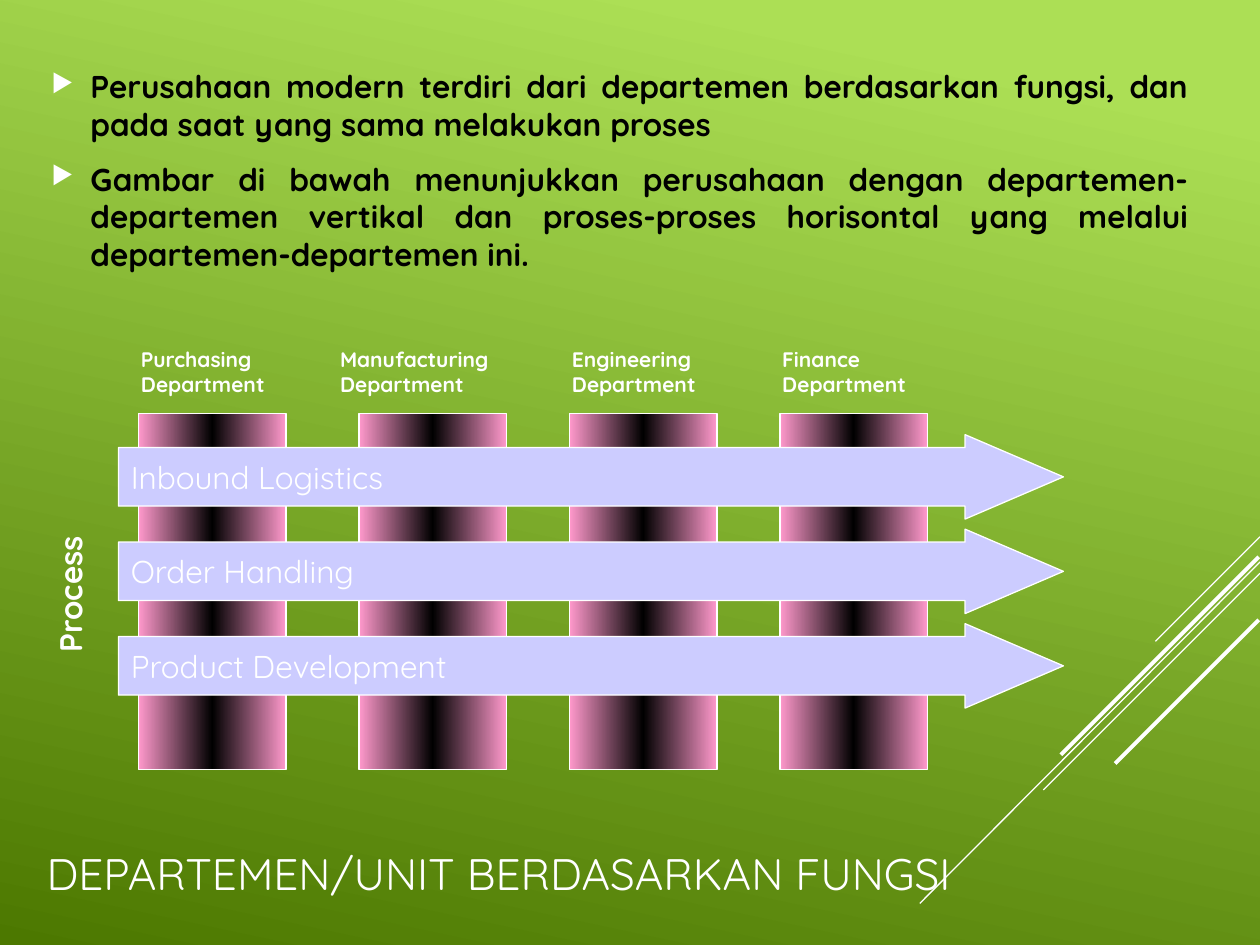
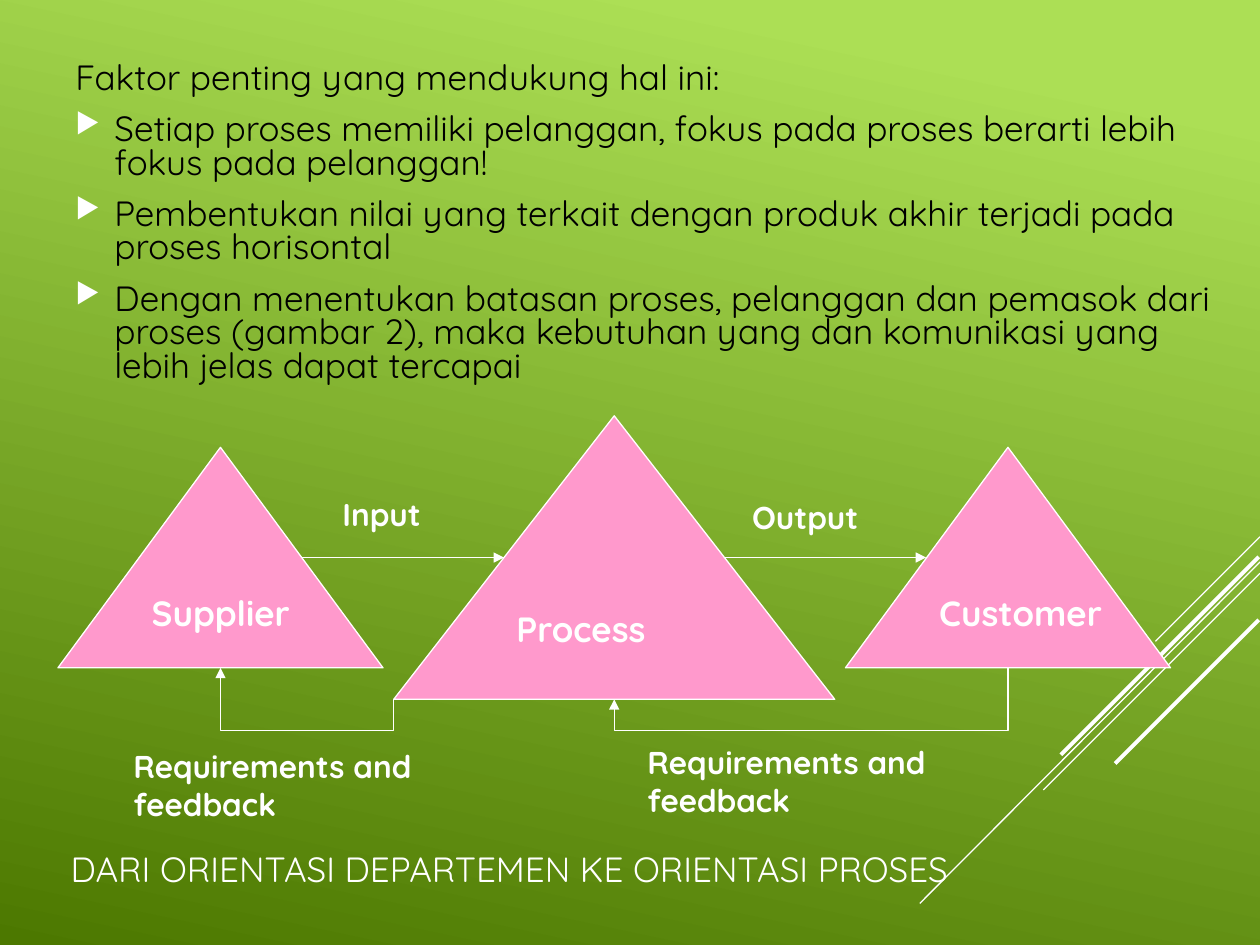
from copy import deepcopy

from pptx import Presentation
from pptx.dml.color import RGBColor
from pptx.enum.shapes import MSO_CONNECTOR, MSO_SHAPE
from pptx.enum.text import MSO_ANCHOR, PP_ALIGN
from pptx.oxml.ns import qn
from pptx.oxml.xmlchemy import OxmlElement
from pptx.util import Inches, Pt

FONT = "Quicksand"
WHITE, BLACK = "FFFFFF", "000000"
PINK, LILAC = "FF99CC", "CCCCFF"
BACKGROUND_STOPS = [(0.1, "ACDF55"), (1, "4C7800")]
BAR_STOPS = [(0, PINK), (0.5, BLACK), (1, PINK)]
# Diagonal strokes in the lower right corner: start, end, width
STROKES = [
    ((10, 4.26), (9.17, 5.09), 0.75),
    ((10, 4.46), (7.3, 7.17), 0.75),
    ((10, 4.55), (8.28, 6.27), 0.75),
    ((9.99, 4.42), (8.42, 5.99), 2.25),
    ((9.99, 4.92), (8.85, 6.06), 2.25),
]


# Shared helpers
def color(value):
    return RGBColor.from_string(value)


def add_element(parent, tag, **attributes):
    element = OxmlElement(tag)
    for name, value in attributes.items():
        element.set(name, str(value))
    parent.append(element)
    return element


def set_gradient(fill, owner, stops, angle):
    fill.gradient()
    fill.gradient_angle = angle
    stop_list = next(owner.iter(qn("a:gsLst")))
    while len(stop_list) < len(stops):
        stop_list.append(deepcopy(stop_list[0]))
    for stop, (position, value) in zip(fill.gradient_stops, stops):
        stop.position = position
        stop.color.rgb = color(value)


def add_bullet(para):
    properties = para._p.get_or_add_pPr()
    bullet_color = add_element(properties, "a:buClr")
    add_element(bullet_color, "a:srgbClr", val=WHITE)
    add_element(properties, "a:buSzPct", val=80000)
    add_element(properties, "a:buChar", char="▶")


def write(frame, text, size=18, ink=WHITE, bold=False, align=PP_ALIGN.LEFT,
          anchor=MSO_ANCHOR.TOP, wrap=True, first=True):
    """Write one paragraph into a text frame and return it."""
    frame.word_wrap = wrap
    frame.vertical_anchor = anchor
    para = frame.paragraphs[0] if first else frame.add_paragraph()
    para.alignment = align
    span = para.add_run()
    span.text = text
    span.font.name = FONT
    span.font.size = Pt(size)
    span.font.bold = bold
    span.font.color.rgb = color(ink)
    return para


def add_label(page, text, box, size=18):
    label = page.shapes.add_textbox(*map(Inches, box))
    write(label.text_frame, text, size=size, bold=True)
    return label


def add_figure(page, kind, box, fill=None):
    figure = page.shapes.add_shape(kind, *map(Inches, box))
    figure.shadow.inherit = False
    if fill:
        figure.fill.solid()
        figure.fill.fore_color.rgb = color(fill)
    figure.line.color.rgb = color(WHITE)
    figure.line.width = Pt(0.75)
    return figure


def add_line(page, start, end, width=0.75, arrow=False,
             kind=MSO_CONNECTOR.STRAIGHT):
    line = page.shapes.add_connector(kind, *map(Inches, (*start, *end)))
    line.line.color.rgb = color(WHITE)
    line.line.width = Pt(width)
    if arrow:
        add_element(line.line._get_or_add_ln(), "a:tailEnd", type="triangle")
    add_element(line._element.spPr, "a:effectLst")
    return line


def add_feedback_arrow(page, start, end, turn_y):
    """Elbow that leaves downwards, crosses at turn_y and comes back up."""
    (start_x, start_y), (end_x, end_y) = start, end
    down = end_y > start_y
    middle_x, middle_y = (start_x + end_x) / 2, (start_y + end_y) / 2
    half_width = abs(end_y - start_y) / 2
    half_height = (start_x - end_x) / 2 * (1 if down else -1)
    elbow = add_line(page, (middle_x - half_width, middle_y - half_height),
                     (middle_x + half_width, middle_y + half_height),
                     arrow=True, kind=MSO_CONNECTOR.ELBOW)
    properties = elbow._element.spPr
    properties.find(qn("a:xfrm")).set("rot", str((90 if down else 270) * 60000))
    bend = round((turn_y - start_y) / (end_y - start_y) * 100000)
    guides = properties.find(qn("a:prstGeom")).get_or_add_avLst()
    add_element(guides, "a:gd", name="adj1", fmla=f"val {bend}")


# Parts that every slide has
def add_page(deck, title, title_box, title_size):
    page = deck.slides.add_slide(deck.slide_layouts[5])
    set_gradient(page.background.fill, page._element, BACKGROUND_STOPS, 258)
    for start, end, width in STROKES:
        add_line(page, start, end, width)
    heading = page.shapes.title
    heading.left, heading.top, heading.width, heading.height = map(Inches, title_box)
    write(heading.text_frame, title, size=title_size, anchor=MSO_ANCHOR.MIDDLE)
    return page


def add_body(page, box, texts, size, intro=None, spacing=None, **style):
    frame = page.shapes.add_textbox(*map(Inches, box)).text_frame
    lines = ([intro] if intro else []) + texts
    for index, text in enumerate(lines):
        para = write(frame, text, size=size, ink=BLACK, first=index == 0,
                     anchor=MSO_ANCHOR.MIDDLE, **style)
        para.line_spacing = spacing
        para.space_before = Pt(size * 0.2)
        para.space_after = Pt(6)
        properties = para._p.get_or_add_pPr()
        properties.set("marL", str(Inches(0.31)))
        properties.set("indent", str(-Inches(0.31)))
        if text != intro:
            add_bullet(para)


# Departments as columns, processes as arrows across them
def add_department_chart(page, box):
    left, top, width, height = box
    departments = [  # name, bar offset, label offset, label width
        ("Purchasing", 1.21, 1.13, 1.33),
        ("Manufacturing", 2.96, 2.71, 1.58),
        ("Engineering", 4.63, 4.55, 1.41),
        ("Finance", 6.3, 6.22, 1.41),
    ]
    bar_top = 0.58
    for name, bar_x, label_x, label_width in departments:
        bar = add_figure(page, MSO_SHAPE.RECTANGLE,
                         (left + bar_x, top + bar_top, 1.17, height - bar_top))
        set_gradient(bar.fill, bar._element, BAR_STOPS, 180)
        add_label(page, f"{name} Department",
                  (left + label_x, top, label_width, 0.5), size=12)

    side_label = add_label(page, "Process", (left, top + 1.71, 1.33, 0.4))
    side_label.rotation = 270

    arrow_x = 1.05
    for row, process in enumerate(
            ["Inbound Logistics", "Order Handling", "Product Development"]):
        arrow = add_figure(page, MSO_SHAPE.RIGHT_ARROW,
                           (left + arrow_x, top + 0.75 * (row + 1),
                            width - arrow_x, 0.67), LILAC)
        arrow.adjustments[0], arrow.adjustments[1] = 0.693, 1.164
        write(arrow.text_frame, process, anchor=MSO_ANCHOR.MIDDLE, wrap=False)


# Supplier, process and customer with flows and feedback
def add_process_chain(page, box):
    left, top, width, _ = box
    side_width, side_height = 2.58, 1.75
    core_width, core_height = 3.5, 2.25
    side_top = top + 0.25
    customer_x = left + width - side_width
    core_x = left + (width - core_width) / 2
    triangles = [
        ("Supplier", (left, side_top, side_width, side_height)),
        ("Customer", (customer_x, side_top, side_width, side_height)),
        ("Process", (core_x, top, core_width, core_height)),
    ]
    for name, triangle_box in triangles:
        triangle = add_figure(page, MSO_SHAPE.ISOSCELES_TRIANGLE, triangle_box, PINK)
        write(triangle.text_frame, name, size=20, bold=True,
              anchor=MSO_ANCHOR.MIDDLE, wrap=False)

    # Flows between the slanted sides
    flow_y = top + core_height / 2
    for start_x, end_x in [(1.93, 3.54), (5.29, 6.89)]:
        add_line(page, (left + start_x, flow_y), (left + end_x, flow_y), arrow=True)

    # Feedback below the triangles
    side_base, core_base = side_top + side_height, top + core_height
    turn_y = core_base + 0.25
    add_feedback_arrow(page, (core_x, core_base),
                       (left + side_width / 2, side_base), turn_y)
    add_feedback_arrow(page, (customer_x + side_width / 2, side_base),
                       (core_x + core_width / 2, core_base), turn_y)

    for text, x, y, label_width, label_height in [
        ("Input", 2.16, 0.58, 1.17, 0.4),
        ("Output", 5.41, 0.6, 1.42, 0.4),
        ("Requirements and feedback", 0.5, 2.58, 2.75, 0.7),
        ("Requirements and feedback", 4.58, 2.55, 2.75, 0.7),
    ]:
        add_label(page, text, (left + x, top + y, label_width, label_height))


def main():
    deck = Presentation()
    deck.slide_width, deck.slide_height = Inches(10), Inches(7.5)

    page = add_page(deck, "DEPARTEMEN/UNIT BERDASARKAN FUNGSI",
                    (0.27, 6.74, 8.94, 0.37), 25.2)
    add_body(page, (0.31, 0.28, 9.22, 2.14), [
        "Perusahaan modern terdiri dari departemen berdasarkan fungsi, dan "
        "pada saat yang sama melakukan proses",
        "Gambar di bawah menunjukkan perusahaan dengan departemen-departemen "
        "vertikal dan proses-proses horisontal yang melalui "
        "departemen-departemen ini.",
    ], 18, bold=True, align=PP_ALIGN.JUSTIFY)
    add_department_chart(page, (-0.11, 2.7, 8.55, 3.41))

    page = add_page(deck, "DARI ORIENTASI DEPARTEMEN KE ORIENTASI PROSES",
                    (0.46, 6.58, 7.17, 0.63), 20)
    add_body(page, (0.5, 0.32, 9.38, 2.92), [
        "Setiap proses memiliki pelanggan, fokus pada proses berarti lebih "
        "fokus pada pelanggan!",
        "Pembentukan nilai yang terkait dengan produk akhir terjadi pada "
        "proses horisontal",
        "Dengan menentukan batasan proses, pelanggan dan pemasok dari proses "
        "(gambar 2), maka kebutuhan yang dan komunikasi yang lebih jelas "
        "dapat tercapai",
    ], 20, intro="Faktor penting yang mendukung hal ini:", spacing=0.8)
    add_process_chain(page, (0.46, 3.3, 8.83, 3.28))

    deck.save("out.pptx")


if __name__ == "__main__":
    main()
